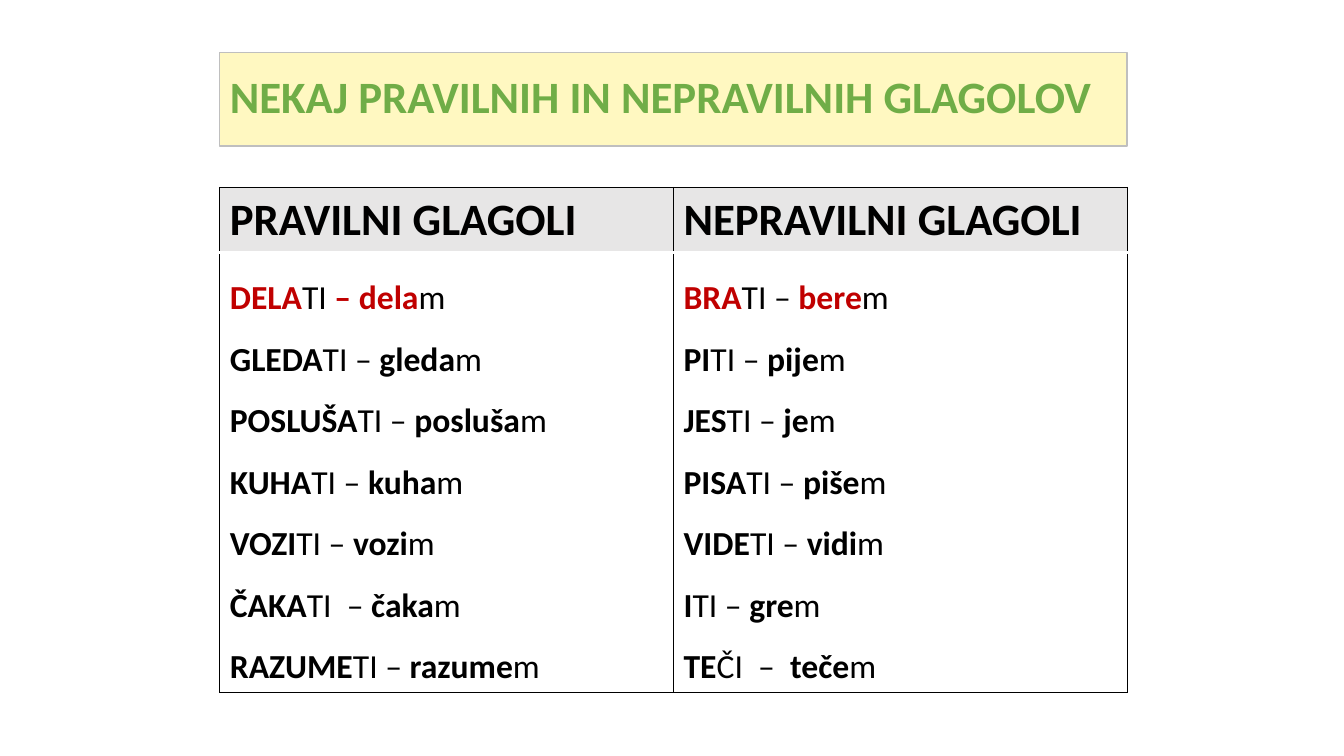
import dataclasses

import pptx
import pptx.dml.color
import pptx.enum.text
import pptx.oxml.ns
import pptx.presentation
import pptx.slide
import pptx.table
import pptx.text.text
import pptx.util
from lxml import etree

Inches = pptx.util.Inches
Pt = pptx.util.Pt

FONT = "Calibri"
BLACK, WHITE, RED, GREEN = "000000", "FFFFFF", "C00000", "70AD47"
LEFT, WIDTH = 2.18, 9.0
ROW_HEIGHTS = (0.64, 4.37)


@dataclasses.dataclass
class Verb:
    stem: str
    ending: str
    present: str
    dash: str = " – "
    accent: str = BLACK
    accent_dash: bool = False


@dataclasses.dataclass
class VerbColumn:
    heading: str
    verbs: list[Verb]


@dataclasses.dataclass
class Border:
    side: str
    color: str = BLACK
    width: float = 0.96


COLUMNS = [
    VerbColumn("PRAVILNI GLAGOLI", [
        Verb("DELA", "TI", "dela", accent=RED, accent_dash=True),
        Verb("GLEDA", "TI", "gleda"),
        Verb("POSLUŠA", "TI", "posluša"),
        Verb("KUHA", "TI", "kuha"),
        Verb("VOZI", "TI", "vozi"),
        Verb("ČAKA", "TI", "čaka", dash="  – "),
        Verb("RAZUME", "TI", "razume"),
    ]),
    VerbColumn("NEPRAVILNI GLAGOLI", [
        Verb("BRA", "TI", "bere", accent=RED),
        Verb("PI", "TI", "pije"),
        Verb("JES", "TI", "je"),
        Verb("PISA", "TI", "piše"),
        Verb("VIDE", "TI", "vidi"),
        Verb("I", "TI", "gre"),
        Verb("TE", "ČI", "teče", dash="  –  "),
    ]),
]
HEADING_BORDERS = [Border("L"), Border("R"), Border("T"), Border("B", WHITE, 3)]
VERB_BORDERS = [Border("L"), Border("R"), Border("T", WHITE), Border("B")]


def rgb(color: str) -> pptx.dml.color.RGBColor:
    return pptx.dml.color.RGBColor.from_string(color)


def format_run(r: pptx.text.text._Run, size: float, color: str, bold: bool) -> None:
    r.font.name = FONT
    r.font.size = Pt(size)
    r.font.bold = bold
    r.font.color.rgb = rgb(color)


def style_cell(cell: pptx.table._Cell, fill: str, borders: list[Border]) -> None:
    """Set the borders first, because the schema puts them before the fill."""
    tc_pr = cell._tc.get_or_add_tcPr()
    for border in borders:
        ln = etree.SubElement(tc_pr, pptx.oxml.ns.qn(f"a:ln{border.side}"),
                              w=str(int(Pt(border.width))))
        solid = etree.SubElement(ln, pptx.oxml.ns.qn("a:solidFill"))
        etree.SubElement(solid, pptx.oxml.ns.qn("a:srgbClr"), val=border.color)
    cell.fill.solid()
    cell.fill.fore_color.rgb = rgb(fill)


def write_verb(p: pptx.text.text._Paragraph, verb: Verb) -> None:
    p.line_spacing = 1.5
    parts = [
        (verb.stem, True),
        (verb.ending, False),
        (verb.dash, verb.accent_dash),
        (verb.present, True),
        ("m", False),
    ]
    for text, strong in parts:
        r = p.add_run()
        r.text = text
        format_run(r, 24, verb.accent if strong else BLACK, strong)


def add_title(s: pptx.slide.Slide) -> None:
    sp = s.shapes.title
    sp.left, sp.top = Inches(LEFT), Inches(0.52)
    sp.width, sp.height = Inches(WIDTH), Inches(0.93)
    sp.fill.solid()
    sp.fill.fore_color.rgb = rgb("FFF8C1")
    sp.line.color.rgb = rgb("BFBFBF")
    sp.line.width = Pt(1)
    tf = sp.text_frame
    tf.text = "NEKAJ PRAVILNIH IN NEPRAVILNIH GLAGOLOV"
    tf.word_wrap = True
    tf.auto_size = pptx.enum.text.MSO_AUTO_SIZE.NONE
    tf.vertical_anchor = pptx.enum.text.MSO_ANCHOR.MIDDLE
    p = tf.paragraphs[0]
    p.alignment = pptx.enum.text.PP_ALIGN.LEFT
    p.line_spacing = 0.9
    format_run(p.runs[0], 32, GREEN, True)


def add_verb_table(s: pptx.slide.Slide) -> None:
    table = s.shapes.add_table(
        len(ROW_HEIGHTS), len(COLUMNS), Inches(LEFT), Inches(1.86),
        Inches(WIDTH), Inches(sum(ROW_HEIGHTS))).table
    table.horz_banding = False
    for row, height in zip(table.rows, ROW_HEIGHTS):
        row.height = Inches(height)
    for i, column in enumerate(COLUMNS):
        heading, body = table.cell(0, i), table.cell(1, i)
        style_cell(heading, "E7E6E6", HEADING_BORDERS)
        style_cell(body, WHITE, VERB_BORDERS)
        heading.text_frame.text = column.heading
        format_run(heading.text_frame.paragraphs[0].runs[0], 32, BLACK, True)
        tf = body.text_frame
        for j, verb in enumerate(column.verbs):
            write_verb(tf.add_paragraph() if j else tf.paragraphs[0], verb)


def main() -> None:
    prs = pptx.Presentation()
    prs.slide_width, prs.slide_height = Inches(13.33), Inches(7.5)
    s = prs.slides.add_slide(prs.slide_layouts[5])
    add_title(s)
    add_verb_table(s)
    prs.save("out.pptx")


if __name__ == "__main__":
    main()
